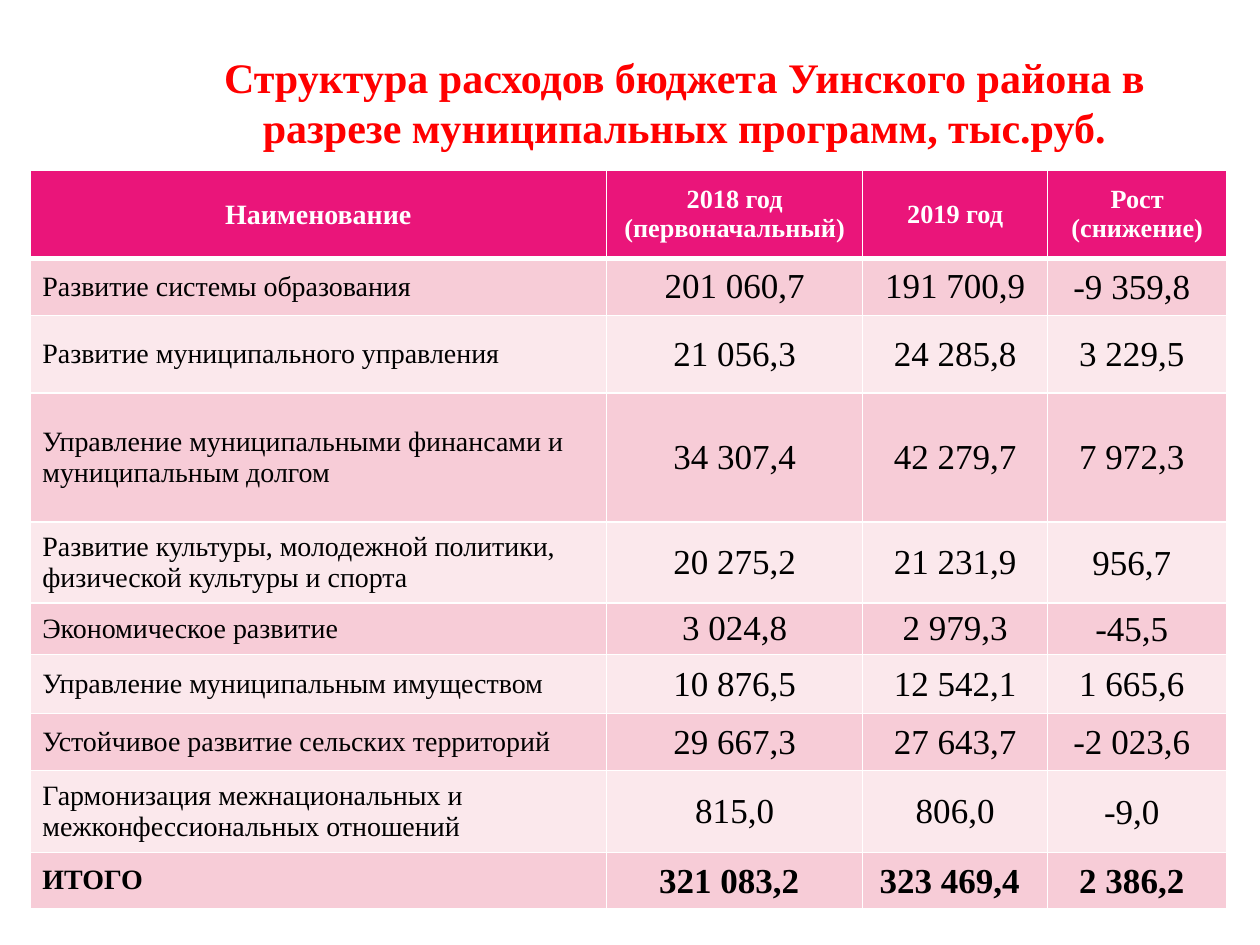
from lxml.etree import SubElement
from pptx import Presentation
from pptx.dml.color import RGBColor as RGB
from pptx.enum.text import MSO_ANCHOR as ANCHOR, MSO_AUTO_SIZE as FIT, PP_ALIGN as ALIGN
from pptx.oxml.ns import qn
from pptx.util import Cm, Pt

TITLE = "Структура расходов бюджета Уинского района в разрезе муниципальных программ, тыс.руб."
HEADER = ("Наименование", "2018 год (первоначальный)", "2019 год", "Рост (снижение)")
PROGRAMMES = [
    ("Развитие системы образования", "201 060,7", "191 700,9", "-9 359,8"),
    ("Развитие муниципального управления", "21 056,3", "24 285,8", "3 229,5"),
    ("Управление муниципальными финансами и муниципальным долгом",
     "34 307,4", "42 279,7", "7 972,3"),
    ("Развитие культуры, молодежной политики, физической культуры и спорта",
     "20 275,2", "21 231,9", "956,7"),
    ("Экономическое развитие", "3 024,8", "2 979,3", "-45,5"),
    ("Управление муниципальным имуществом", "10 876,5", "12 542,1", "1 665,6"),
    ("Устойчивое развитие сельских территорий", "29 667,3", "27 643,7", "-2 023,6"),
    ("Гармонизация межнациональных и межконфессиональных отношений",
     "815,0", "806,0", "-9,0"),
]
TOTAL = ("ИТОГО", "321 083,2", "323 469,4", "2 386,2")
ROWS = [HEADER, *PROGRAMMES, TOTAL]

COL_WIDTHS = (11.63, 5.16, 3.73, 3.61)
ROW_HEIGHTS = (1.77, 1.15, 1.56, 2.6, 1.64, 1.03, 1.19, 1.15, 1.65, 1.13)
TIGHT = {"margin_left": Cm(0.03), "margin_top": Cm(0.03),
         "margin_right": Cm(0.25), "margin_bottom": 0}

THEME = {
    "font": "Times New Roman",
    "title": "FF0000", "head": "EA157A", "bands": ("FBE8EC", "F7CCD7"),
    "text": "000000", "light": "FFFFFF",
    "title_size": 24, "name_size": 16, "head_size": 15, "value_size": 20,
    "rule": 1, "head_rule": 3,
}


def set_attrs(obj, values):
    for name, value in values.items():
        setattr(obj, name, value)


def write(tf, text, size, color, bold, align):
    p = tf.paragraphs[0]
    p.alignment = align
    r = p.add_run()
    r.text = text
    set_attrs(r.font, {"name": THEME["font"], "size": Pt(size), "bold": bold})
    r.font.color.rgb = RGB.from_string(color)


def set_borders(cell, widths):
    """Draw the light rules; widths are points for left, right, top, bottom."""
    tc_pr = cell._tc.get_or_add_tcPr()
    for side, width in zip("LRTB", widths):
        ln = SubElement(tc_pr, qn(f"a:ln{side}"), w=str(Pt(width)))
        SubElement(SubElement(ln, qn("a:solidFill")), qn("a:srgbClr"), val=THEME["light"])


def format_cell(cell, text, row, col):
    head, total = row == 0, row == len(ROWS) - 1
    rule, head_rule = THEME["rule"], THEME["head_rule"]
    set_borders(cell, (rule, rule, head_rule if row == 1 else rule,
                       head_rule if head else rule))
    cell.fill.solid()
    cell.fill.fore_color.rgb = RGB.from_string(
        THEME["head"] if head else THEME["bands"][row % 2])
    cell.vertical_anchor = ANCHOR.MIDDLE
    if not head and (col == 3 or total and col):
        set_attrs(cell, TIGHT)
    size = THEME["name_size" if col == 0 else "head_size" if head else "value_size"]
    write(cell.text_frame, text, size, THEME["light" if head else "text"], head or total,
          ALIGN.CENTER if head or col else ALIGN.LEFT)


def add_title(s):
    sp = s.shapes.title
    set_attrs(sp, {"left": Cm(3.38), "top": Cm(0.58), "width": Cm(20.83), "height": Cm(2.77)})
    set_attrs(sp.text_frame, {"word_wrap": True, "auto_size": FIT.NONE,
                              "vertical_anchor": ANCHOR.MIDDLE, "margin_top": Cm(0.3)})
    write(sp.text_frame, TITLE, THEME["title_size"], THEME["title"], True, ALIGN.CENTER)


def add_budget_table(s):
    table = s.shapes.add_table(len(ROWS), len(HEADER), Cm(0.6), Cm(3.44),
                               Cm(sum(COL_WIDTHS)), Cm(sum(ROW_HEIGHTS))).table
    for column, width in zip(table.columns, COL_WIDTHS):
        column.width = Cm(width)
    for i, (values, height) in enumerate(zip(ROWS, ROW_HEIGHTS)):
        table.rows[i].height = Cm(height)
        for j, text in enumerate(values):
            format_cell(table.cell(i, j), text, i, j)


def main():
    prs = Presentation()
    prs.slide_width, prs.slide_height = Cm(25.4), Cm(19.05)
    s = prs.slides.add_slide(prs.slide_layouts[5])
    add_title(s)
    add_budget_table(s)
    prs.save("out.pptx")


if __name__ == "__main__":
    main()
